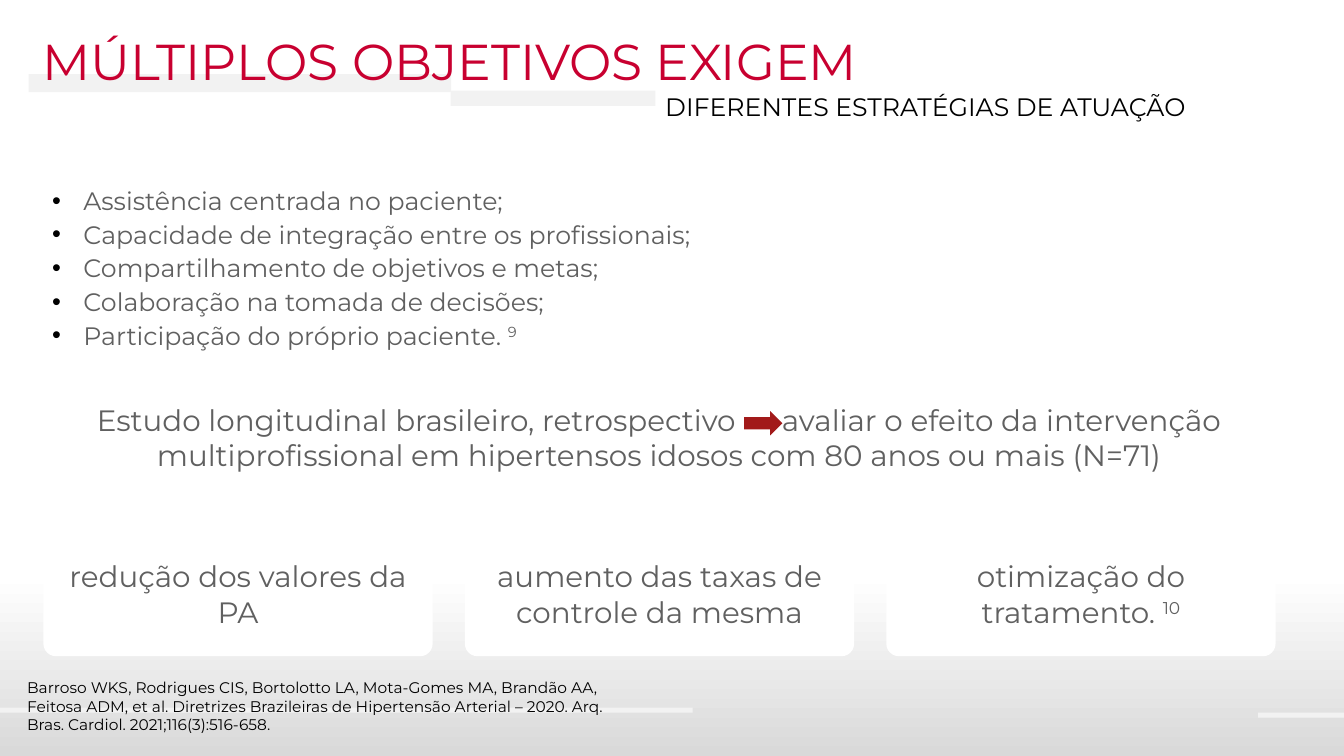
from lxml import etree
from pptx import Presentation, util as u
from pptx.dml.color import RGBColor
from pptx.enum import shapes, text
from pptx.oxml.ns import qn

WIDTH, HEIGHT = u.Inches(13.33), u.Inches(7.5)
FONT = "Montserrat"
RED = RGBColor(0xC8, 0x00, 0x30)
ARROW_RED = RGBColor(0xA2, 0x1A, 0x1A)
BLACK = RGBColor(0, 0, 0)
GREY = RGBColor(0x60, 0x60, 0x60)
SILVER = RGBColor(0xD9, 0xD9, 0xD9)
PALE = RGBColor(0xF2, 0xF2, 0xF2)
WHITE = RGBColor(0xFF, 0xFF, 0xFF)

SUPERSCRIPT = {"baseline": "30000"}
ARROW_GAP = {"spc": "2750"}  # widens one space to hold the arrow

# Places are percentages of the slide: left, top, width, height
BARS = [
    (2.14, 9.8, 31.43, 2.4),
    (33.53, 12, 15.23, 2),
    (-0.15, 93.6, 51.69, 0.67),
    (93.62, 94.27, 6.38, 0.67),
]
CARD_LEFT, CARD_STEP = 3.23, 31.36

PRINCIPLES = [
    ["Assistência centrada no paciente;"],
    ["Capacidade de integração entre os profissionais;"],
    ["Compartilhamento de objetivos e metas;"],
    ["Colaboração na tomada de decisões;"],
    ["Participação do próprio paciente. ", ("9", SUPERSCRIPT)],
]
STUDY = [
    "Estudo longitudinal brasileiro, retrospectivo",
    (" ", ARROW_GAP),
    "avaliar o efeito da intervenção multiprofissional em hipertensos "
    "idosos com 80 anos ou mais (N=71)",
]
RESULTS = [
    ["redução dos valores da PA"],
    ["aumento das taxas de controle da mesma"],
    ["otimização do tratamento. ", ("10", SUPERSCRIPT)],
]
REFERENCE = (
    "Barroso WKS, Rodrigues CIS, Bortolotto LA, Mota-Gomes MA, Brandão AA, "
    "Feitosa ADM, et al. Diretrizes Brazileiras de Hipertensão Arterial – 2020. "
    "Arq. Bras. Cardiol. 2021;116(3):516-658."
)


def area(left, top, width, height):
    return [int(share * side / 100) for share, side in
            zip((left, top, width, height), (WIDTH, HEIGHT) * 2)]


def set_all(target, values):
    for name, value in values.items():
        setattr(target, name, value)


def add_bullet(p):
    pPr = p._p.get_or_add_pPr()
    indent = u.Inches(0.31)
    pPr.set("marL", str(indent))
    pPr.set("indent", str(-indent))
    colour = etree.SubElement(pPr, qn("a:buClr"))
    etree.SubElement(colour, qn("a:srgbClr"), val=str(BLACK))
    etree.SubElement(pPr, qn("a:buFont"), typeface="Arial")
    etree.SubElement(pPr, qn("a:buChar"), char="•")


def write(p, parts, size, colour, align=text.PP_ALIGN.LEFT):
    """Fill a paragraph with plain strings and (string, run attributes) pairs."""
    p.alignment = align
    for part in parts:
        words, extras = (part, {}) if isinstance(part, str) else part
        r = p.add_run()
        r.text = words
        set_all(r.font, {"name": FONT, "size": u.Pt(size)})
        r.font.color.rgb = colour
        for name, value in extras.items():
            r._r.get_or_add_rPr().set(name, value)


def add_figure(s, kind, place, colour):
    sp = s.shapes.add_shape(kind, *area(*place))
    sp.shadow.inherit = False
    sp.line.fill.background()
    sp.fill.solid()
    sp.fill.fore_color.rgb = colour
    return sp


def add_backdrop(s):
    sp = add_figure(s, shapes.MSO_SHAPE.RECTANGLE, (-0.15, 0, 100.38, 100), WHITE)
    sp.fill.gradient()
    sp.fill.gradient_angle = 270
    for stop, position, colour in zip(sp.fill.gradient_stops, (0.76, 1), (WHITE, SILVER)):
        stop.position = position
        stop.color.rgb = colour


def add_card(s, place, parts):
    sp = add_figure(s, shapes.MSO_SHAPE.ROUNDED_RECTANGLE, place, WHITE)
    sp.adjustments[0] = 0.1
    tf = sp.text_frame
    sides = ("left", "top", "right", "bottom")
    set_all(tf, {f"margin_{side}": u.Inches(0.13) for side in sides})
    set_all(tf, {"word_wrap": True, "vertical_anchor": text.MSO_ANCHOR.MIDDLE})
    write(tf.paragraphs[0], parts, 21, GREY, text.PP_ALIGN.CENTER)


def add_text(s, place, paragraphs, size, colour, bullets=False):
    tf = s.shapes.add_textbox(*area(*place)).text_frame
    tf.word_wrap = True
    for i, parts in enumerate(paragraphs):
        p = tf.add_paragraph() if i else tf.paragraphs[0]
        if bullets:
            p.space_after = u.Pt(2.4)
            add_bullet(p)
        write(p, parts, size, colour)


def place_title(s, place, words):
    title = s.shapes.title
    set_all(title, dict(zip(("left", "top", "width", "height"), area(*place))))
    tf = title.text_frame
    set_all(tf, {"word_wrap": True, "auto_size": text.MSO_AUTO_SIZE.NONE,
                 "vertical_anchor": text.MSO_ANCHOR.TOP})
    write(tf.paragraphs[0], [words], 36, RED)
    s.shapes._spTree.append(title._element)  # bring in front of the bars


def main():
    prs = Presentation()
    set_all(prs, {"slide_width": WIDTH, "slide_height": HEIGHT})
    s = prs.slides.add_slide(prs.slide_layouts[5])

    # Backdrop and decorative bars
    add_backdrop(s)
    for bar in BARS:
        add_figure(s, shapes.MSO_SHAPE.RECTANGLE, bar, PALE)

    # Study and its results
    add_card(s, (CARD_LEFT, 49.6, 91.6, 16.53), STUDY)
    for i, result in enumerate(RESULTS):
        add_card(s, (CARD_LEFT + i * CARD_STEP, 70.27, 28.96, 16.53), result)

    # Headings
    place_title(s, (2.4, 3.33, 85.97, 9.47), "MÚLTIPLOS OBJETIVOS EXIGEM")
    add_text(s, (48.76, 11.47, 48.91, 5.33),
             [["DIFERENTES ESTRATÉGIAS DE ATUAÇÃO"]], 18, BLACK)

    # Principles, arrow inside the study text, reference
    add_text(s, (3.15, 23.87, 75.77, 27.73), PRINCIPLES, 18, GREY, bullets=True)
    add_figure(s, shapes.MSO_SHAPE.RIGHT_ARROW, (55.36, 54.4, 2.85, 3.2), ARROW_RED)
    add_text(s, (1.28, 89.07, 45.39, 8.8), [[REFERENCE]], 11, BLACK)

    prs.save("out.pptx")


if __name__ == "__main__":
    main()
